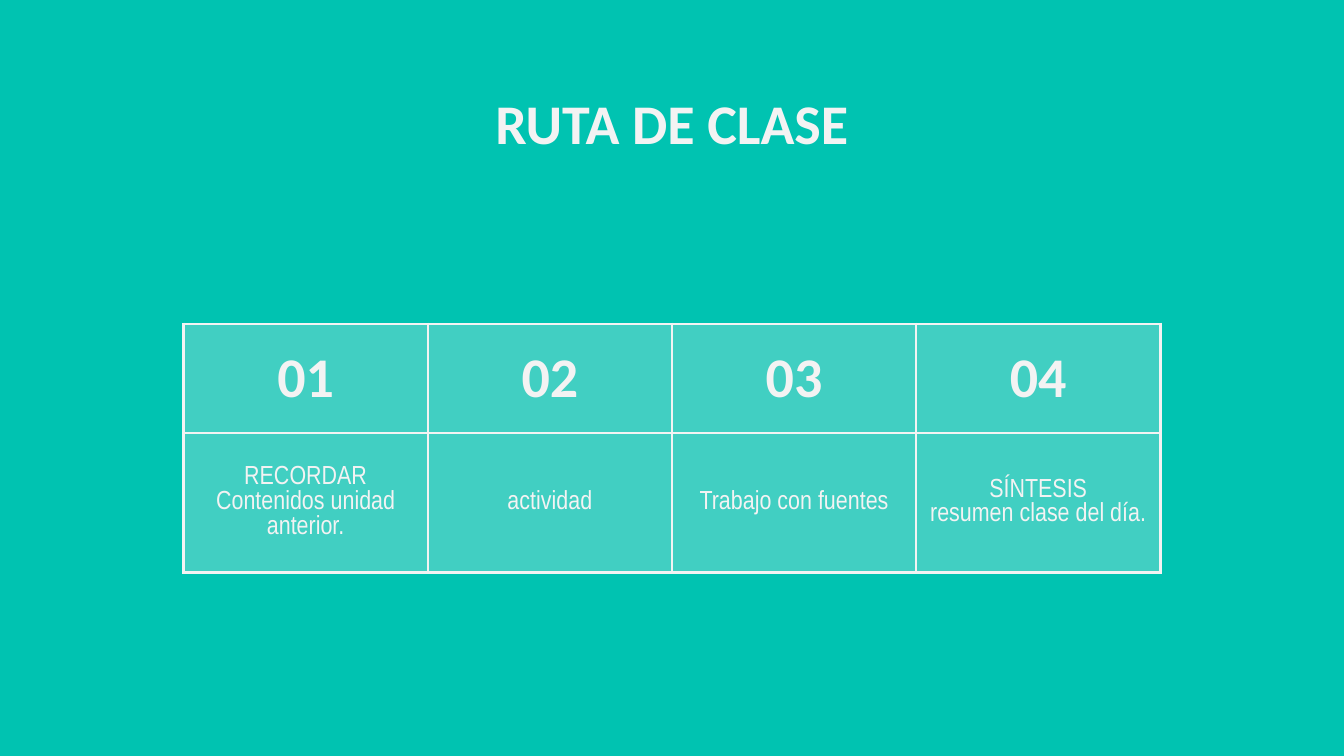
from dataclasses import dataclass

from lxml.etree import SubElement
from pptx import Presentation
from pptx.dml.color import RGBColor
from pptx.enum.text import MSO_ANCHOR, MSO_AUTO_SIZE, PP_ALIGN
from pptx.oxml import parse_xml
from pptx.oxml.ns import nsdecls, qn
from pptx.util import Cm, Pt


@dataclass(frozen=True)
class Theme:
    """Colours, fonts and sizes of the slide."""
    background: str = "00C3B1"
    light: str = "F3F3F3"
    cell_opacity: int = 27
    border: float = 1.5
    heading_font: str = "Calibri"
    heading_size: int = 30
    body_font: str = "Arial Narrow"
    body_size: int = 14
    inset: float = 0.25


@dataclass(frozen=True)
class Box:
    """A region of the slide in centimetres."""
    left: float
    top: float
    width: float
    height: float

    def lengths(self):
        """Return the four sides as slide lengths."""
        return Cm(self.left), Cm(self.top), Cm(self.width), Cm(self.height)


THEME = Theme()
STEPS = [
    ("01", "RECORDAR\nContenidos unidad anterior."),
    ("02", "actividad"),
    ("03", "Trabajo con fuentes"),
    ("04", "SÍNTESIS\nresumen clase del día."),
]


def style_text(frame, heading):
    """Centre the paragraphs and format their runs as heading or body."""
    for paragraph in frame.paragraphs:
        paragraph.alignment = PP_ALIGN.CENTER
        for run in paragraph.runs:
            run.font.name = THEME.heading_font if heading else THEME.body_font
            run.font.size = Pt(THEME.heading_size if heading else THEME.body_size)
            run.font.bold = heading
            run.font.color.rgb = RGBColor.from_string(THEME.light)


def set_insets(area):
    """Give a cell or text frame equal margins on all sides."""
    area.margin_left = area.margin_right = Cm(THEME.inset)
    area.margin_top = area.margin_bottom = Cm(THEME.inset)


def style_cell(cell):
    """Give a cell its translucent fill and its borders."""
    cell.fill.solid()
    cell.fill.fore_color.rgb = RGBColor.from_string(THEME.light)
    properties = cell._tc.get_or_add_tcPr()
    fill_colour = properties.find(qn("a:solidFill")).find(qn("a:srgbClr"))
    SubElement(fill_colour, qn("a:alpha"), val=str(THEME.cell_opacity * 1000))
    for position, side in enumerate(("lnL", "lnR", "lnT", "lnB")):
        properties.insert(position, parse_xml(
            f'<a:{side} {nsdecls("a")} w="{Pt(THEME.border)}"><a:solidFill>'
            f'<a:srgbClr val="{THEME.light}"/></a:solidFill></a:{side}>'))


def place_title(slide, box, wording):
    """Place the slide title in its box."""
    title = slide.shapes.title
    title.left, title.top, title.width, title.height = box.lengths()
    frame = title.text_frame
    frame.text = wording
    frame.auto_size = MSO_AUTO_SIZE.NONE
    frame.vertical_anchor = MSO_ANCHOR.TOP
    set_insets(frame)
    style_text(frame, heading=True)


def place_steps(slide, box, steps, number_share=0.44):
    """Place the table of numbered class steps in its box."""
    table = slide.shapes.add_table(2, len(steps), *box.lengths()).table
    table.first_row = table.horz_banding = False
    table.rows[0].height = Cm(box.height * number_share)
    table.rows[1].height = Cm(box.height * (1 - number_share))
    for column, step in enumerate(steps):
        table.columns[column].width = Cm(box.width / len(steps))
        for row, wording in enumerate(step):
            cell = table.cell(row, column)
            cell.text_frame.text = wording
            cell.vertical_anchor = MSO_ANCHOR.MIDDLE
            set_insets(cell)
            style_text(cell.text_frame, heading=row == 0)
            style_cell(cell)


def main():
    """Build and save the class route slide."""
    presentation = Presentation()
    presentation.slide_width, presentation.slide_height = Cm(25.4), Cm(14.29)
    slide = presentation.slides.add_slide(presentation.slide_layouts[5])
    slide.background.fill.solid()
    slide.background.fill.fore_color.rgb = RGBColor.from_string(THEME.background)
    place_title(slide, Box(2, 1.43, 21.4, 1.6), "RUTA DE CLASE")
    place_steps(slide, Box(3.47, 6.12, 18.46, 4.7), STEPS)
    presentation.save("out.pptx")


if __name__ == "__main__":
    main()
